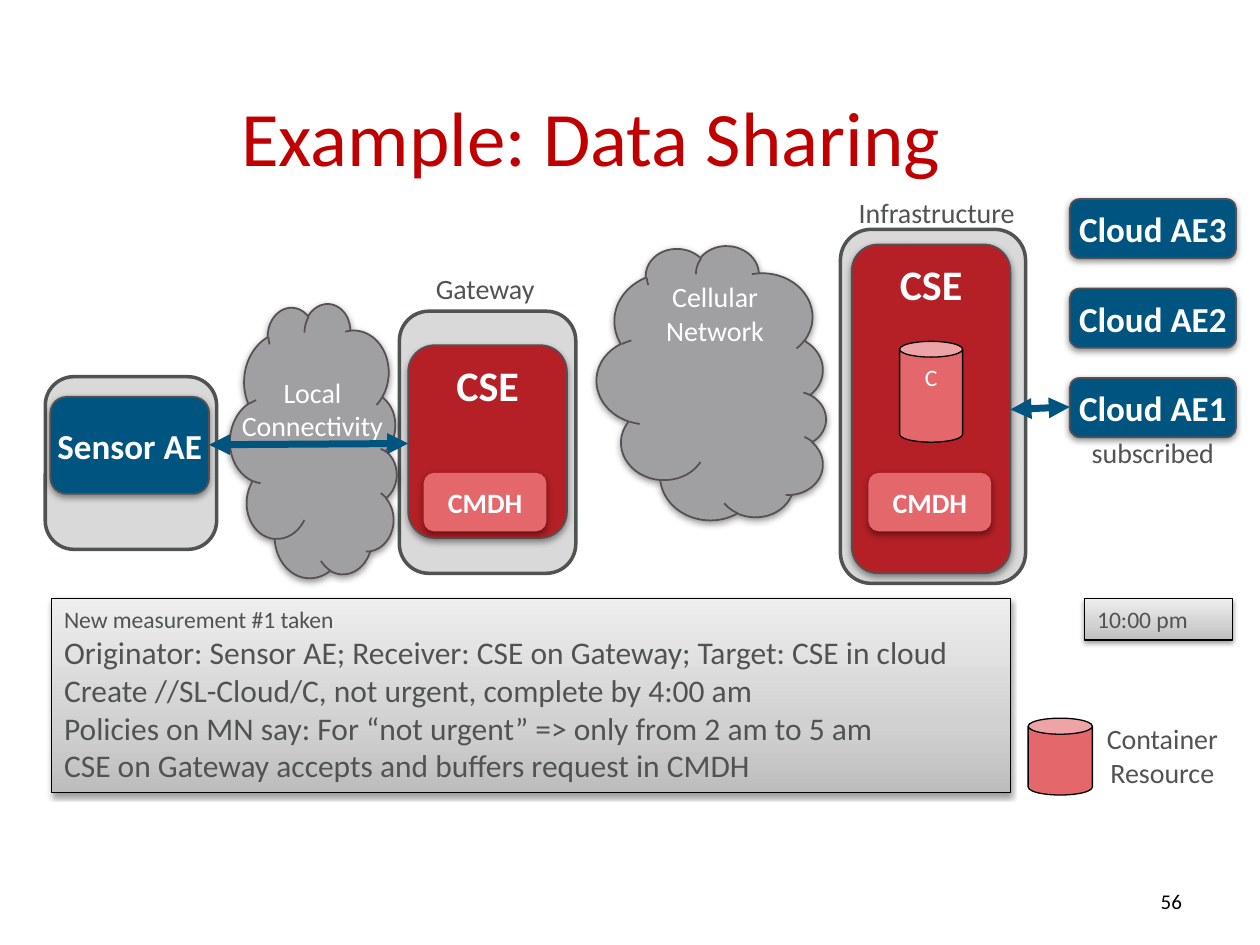
"""Build the data sharing example slide with its sensor, gateway and cloud nodes."""
import dataclasses
import typing

import lxml.etree
import pptx
import pptx.dml.color
import pptx.enum.shapes
import pptx.enum.text
import pptx.oxml
import pptx.oxml.ns
import pptx.util

COLUMNS, ROWS = 100, 75
WIDTH, HEIGHT = pptx.util.Inches(10), pptx.util.Inches(7.5)
FONT = "Calibri"
COLOURS = {
    "title": "C00000", "black": "000000", "white": "FFFFFF", "text": "505450",
    "edge": "545054", "cloud": "A0A0A3", "host": "D9D9D9", "cse": "B42025",
    "rose": "E4676B", "blue": "005480",
}
PANEL_STOPS = ((0, "BDBDBD"), (35, "D1D1D1"), (100, "EEEEEE"))
Shapes = pptx.enum.shapes.MSO_SHAPE
Align = pptx.enum.text.PP_ALIGN
Anchor = pptx.enum.text.MSO_ANCHOR


@dataclasses.dataclass(frozen=True)
class Shadow:
    blur: float
    distance: float
    opacity: int


@dataclasses.dataclass(frozen=True)
class Look:
    shape: typing.Any
    fill: str
    edge: str
    weight: float
    shadow: typing.Optional[Shadow] = None
    turn: float = 0


@dataclasses.dataclass(frozen=True)
class Ink:
    size: float
    colour: str
    bold: bool = False
    align: typing.Any = Align.CENTER
    anchor: typing.Any = Anchor.TOP
    margin: float = 0.1
    wrap: bool = True


class Span(typing.NamedTuple):
    text: str
    size: typing.Optional[float] = None


@dataclasses.dataclass(frozen=True)
class Item:
    column: float
    row: float
    columns: float
    rows: float
    look: typing.Optional[Look] = None
    ink: typing.Optional[Ink] = None
    paras: tuple[tuple[Span, ...], ...] = ()


@dataclasses.dataclass(frozen=True)
class Link:
    start: tuple[float, float]
    end: tuple[float, float]


SOFT = Shadow(4, 1.6, 42)
CLOUD = Look(Shapes.CLOUD, "cloud", "edge", 1, SOFT, 93.9)
HOST = Look(Shapes.ROUNDED_RECTANGLE, "host", "text", 2)
CSE = Look(Shapes.ROUNDED_RECTANGLE, "cse", "edge", 1, SOFT)
CMDH = Look(Shapes.ROUNDED_RECTANGLE, "rose", "rose", 1, SOFT)
ENTITY = Look(Shapes.FLOWCHART_ALTERNATE_PROCESS, "blue", "edge", 1, SOFT)
CAN = Look(Shapes.CAN, "rose", "black", 0.75)
PANEL = Look(Shapes.RECTANGLE, "panel", "black", 0.75, Shadow(3.1, 1.6, 38))

TITLE = Ink(44, "title", anchor=Anchor.MIDDLE)
NUMBER = Ink(12, "black", align=Align.RIGHT, wrap=False)
LABEL = Ink(16, "text")
CLOUD_LABEL = Ink(16, "white")
CSE_NAME = Ink(24, "white", True, margin=0)
CMDH_NAME = Ink(16, "white", True, anchor=Anchor.MIDDLE, margin=0)
ENTITY_NAME = Ink(20, "white", True, anchor=Anchor.MIDDLE, margin=0)
CAN_NAME = Ink(13.5, "white")
NOTE = Ink(13.5, "text", align=Align.LEFT)


def plain(text: str) -> tuple[tuple[Span, ...], ...]:
    return ((Span(text),),)


STEPS = (
    (Span("New measurement #1 taken\n"),
     Span("Originator: Sensor AE; Receiver: CSE on Gateway; Target: CSE in cloud\n"
          "Create //SL-Cloud/C, not urgent, complete by 4:00 am", 18)),
    (Span("Policies on MN say: For “not urgent” => only from 2 am to 5 am", 18),),
    (Span("CSE on Gateway accepts and buffers request in CMDH", 18),),
)
CLOUD_ENTITIES = [
    Item(84.9, 30 - 7.1 * step, 13.2, 4.7, ENTITY, ENTITY_NAME, plain(f"Cloud AE{step + 1}"))
    for step in range(3)
]
ITEMS = [
    Item(90.8, 70, 4, 3, None, NUMBER, plain("56")),
    Item(45.7, 21.2, 21.8, 18.4, CLOUD),
    Item(66.7, 18.2, 14.7, 28.1, HOST),
    Item(0, 2.9, 93.8, 15.8, None, TITLE, plain("Example: Data Sharing")),
    Item(86.1, 47.5, 11.7, 3.3, PANEL, NOTE, plain("10:00 pm")),
    Item(31.7, 24.7, 14, 20.8, HOST),
    Item(32.4, 27.4, 12.6, 15.3, CSE, CSE_NAME, plain("CSE")),
    Item(26.4, 21.1, 24.2, 3.7, None, LABEL, plain("Gateway")),
    Item(67.6, 19.4, 12.6, 26.1, CSE, CSE_NAME, plain("CSE")),
    Item(14.1, 28.3, 21.8, 13.4, CLOUD),
    Item(18, 29.3, 13.6, 6.4, None, CLOUD_LABEL, plain("Local\nConnectivity")),
    Item(3.6, 29.9, 13.6, 13.7, HOST),
    Link((16.6, 35.3), (32.4, 35.2)),
    Item(49.8, 21.7, 13.9, 6.4, None, CLOUD_LABEL, plain("Cellular Network")),
    Item(4, 31.5, 12.6, 7.7, ENTITY, ENTITY_NAME, plain("Sensor AE")),
    Item(71.4, 27.1, 5, 8, CAN, CAN_NAME, plain("C")),
    Item(81.6, 57, 5.1, 6.1, CAN),
    Item(86.8, 56.8, 10.9, 6.4, None, LABEL, plain("Container\nResource")),
    Item(63.8, 15, 21.1, 3.7, None, LABEL, plain("Infrastructure")),
    *(Item(column, 37.6, 9.6, 4.5, CMDH, CMDH_NAME, plain("CMDH")) for column in (33.7, 69)),
    Item(4.1, 47.5, 76.1, 15.4, PANEL, NOTE, STEPS),
    CLOUD_ENTITIES[0],
    Link((84.9, 32.3), (80.2, 32.5)),
    *CLOUD_ENTITIES[1:],
    Item(84.3, 34.1, 14.4, 3.7, None, LABEL, plain("subscribed")),
]


def across(columns: float) -> int:
    return round(WIDTH * columns / COLUMNS)


def down(rows: float) -> int:
    return round(HEIGHT * rows / ROWS)


def rgb(name: str) -> pptx.dml.color.RGBColor:
    return pptx.dml.color.RGBColor.from_string(COLOURS[name])


def add_child(parent: typing.Any, tag: str, **values: typing.Any) -> typing.Any:
    attributes = {key: str(value) for key, value in values.items()}
    return lxml.etree.SubElement(parent, pptx.oxml.ns.qn(tag), attributes)


def paint(box: typing.Any, look: Look) -> None:
    box.rotation = look.turn
    if look.fill == "panel":
        box.fill.gradient()
        box.fill.gradient_angle = 90
        stops = box.element.spPr.find(".//" + pptx.oxml.ns.qn("a:gsLst"))
        for stop in list(stops):
            stops.remove(stop)
        for share, colour in PANEL_STOPS:
            add_child(add_child(stops, "a:gs", pos=share * 1000), "a:srgbClr", val=colour)
    else:
        box.fill.solid()
        box.fill.fore_color.rgb = rgb(look.fill)
    box.line.color.rgb = rgb(look.edge)
    box.line.width = pptx.util.Pt(look.weight)
    box.shadow.inherit = False
    if look.shadow:
        effects = box.element.spPr.find(pptx.oxml.ns.qn("a:effectLst"))
        outer = add_child(effects, "a:outerShdw", blurRad=pptx.util.Pt(look.shadow.blur),
                          dist=pptx.util.Pt(look.shadow.distance), dir=5400000, rotWithShape=0)
        colour = add_child(outer, "a:srgbClr", val=COLOURS["black"])
        add_child(colour, "a:alpha", val=look.shadow.opacity * 1000)


def write(box: typing.Any, ink: Ink, paras: tuple[tuple[Span, ...], ...]) -> None:
    frame = box.text_frame
    frame.word_wrap = ink.wrap
    frame.vertical_anchor = ink.anchor
    frame.margin_left = frame.margin_right = pptx.util.Inches(ink.margin)
    for index, spans in enumerate(paras):
        para = frame.add_paragraph() if index else frame.paragraphs[0]
        para.alignment = ink.align
        for span in spans:
            for number, line in enumerate(span.text.split("\n")):
                if number:
                    para.add_line_break()
                if line:
                    run = para.add_run()
                    run.text = line
                    run.font.name = FONT
                    run.font.size = pptx.util.Pt(span.size or ink.size)
                    run.font.bold = ink.bold
                    run.font.color.rgb = rgb(ink.colour)


def draw_item(page: typing.Any, item: Item) -> None:
    area = across(item.column), down(item.row), across(item.columns), down(item.rows)
    if item.look:
        box = page.shapes.add_shape(item.look.shape, *area)
        paint(box, item.look)
    else:
        box = page.shapes.add_textbox(*area)
    if item.ink:
        write(box, item.ink, item.paras)


def draw_link(page: typing.Any, link: Link) -> None:
    ends = [measure(value) for point in (link.start, link.end)
            for measure, value in zip((across, down), point)]
    arrow = page.shapes.add_connector(pptx.enum.shapes.MSO_CONNECTOR.STRAIGHT, *ends)
    arrow.line.color.rgb = rgb("blue")
    arrow.line.width = pptx.util.Pt(4)
    for tag in ("a:headEnd", "a:tailEnd"):
        add_child(arrow.line._get_or_add_ln(), tag, type="triangle")
    add_child(arrow.element.spPr, "a:effectLst")


def main() -> None:
    deck = pptx.Presentation()
    deck.slide_width, deck.slide_height = WIDTH, HEIGHT
    page = deck.slides.add_slide(deck.slide_layouts[6])
    for item in ITEMS:
        if isinstance(item, Link):
            draw_link(page, item)
        else:
            draw_item(page, item)
    deck.save("out.pptx")


if __name__ == "__main__":
    main()
